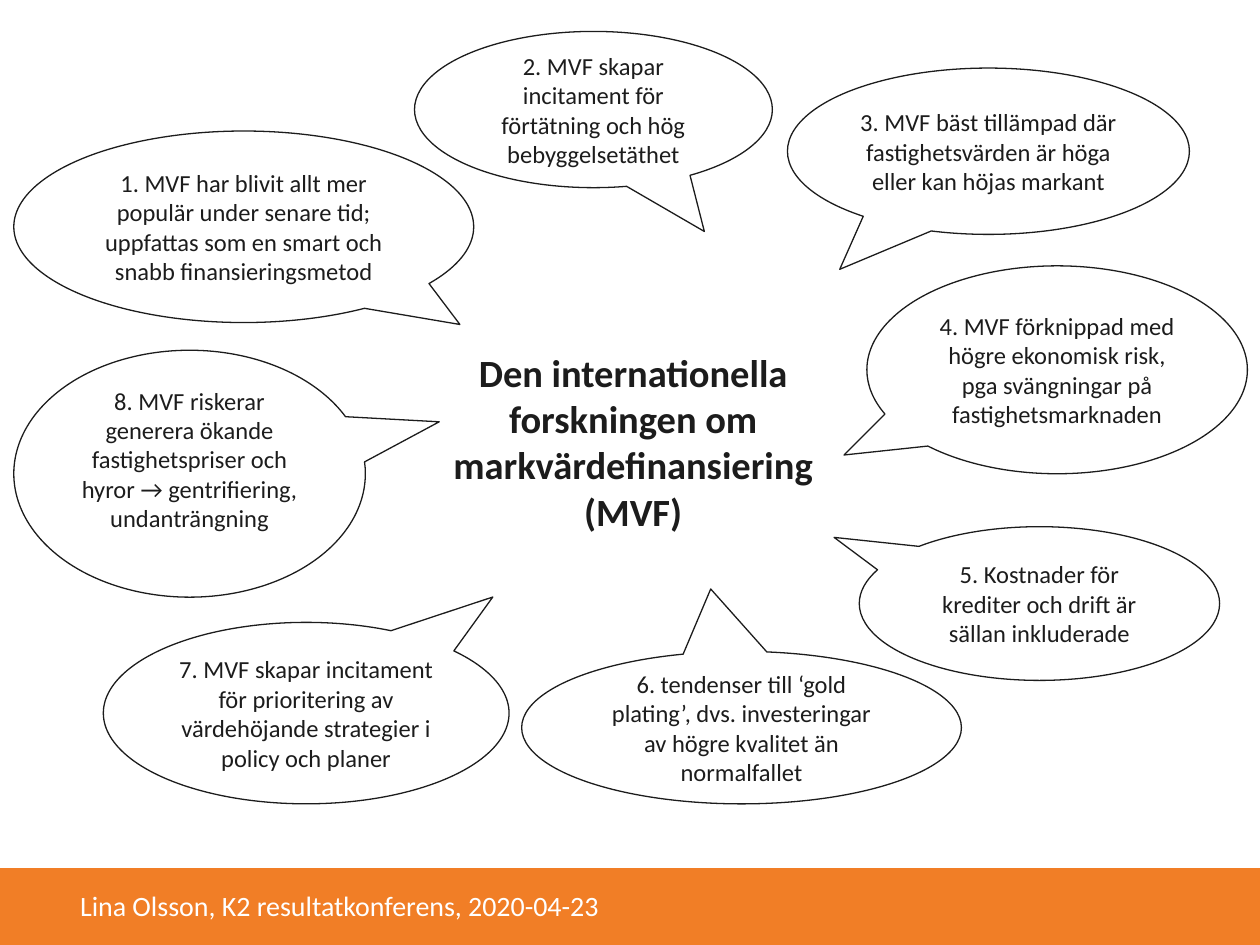
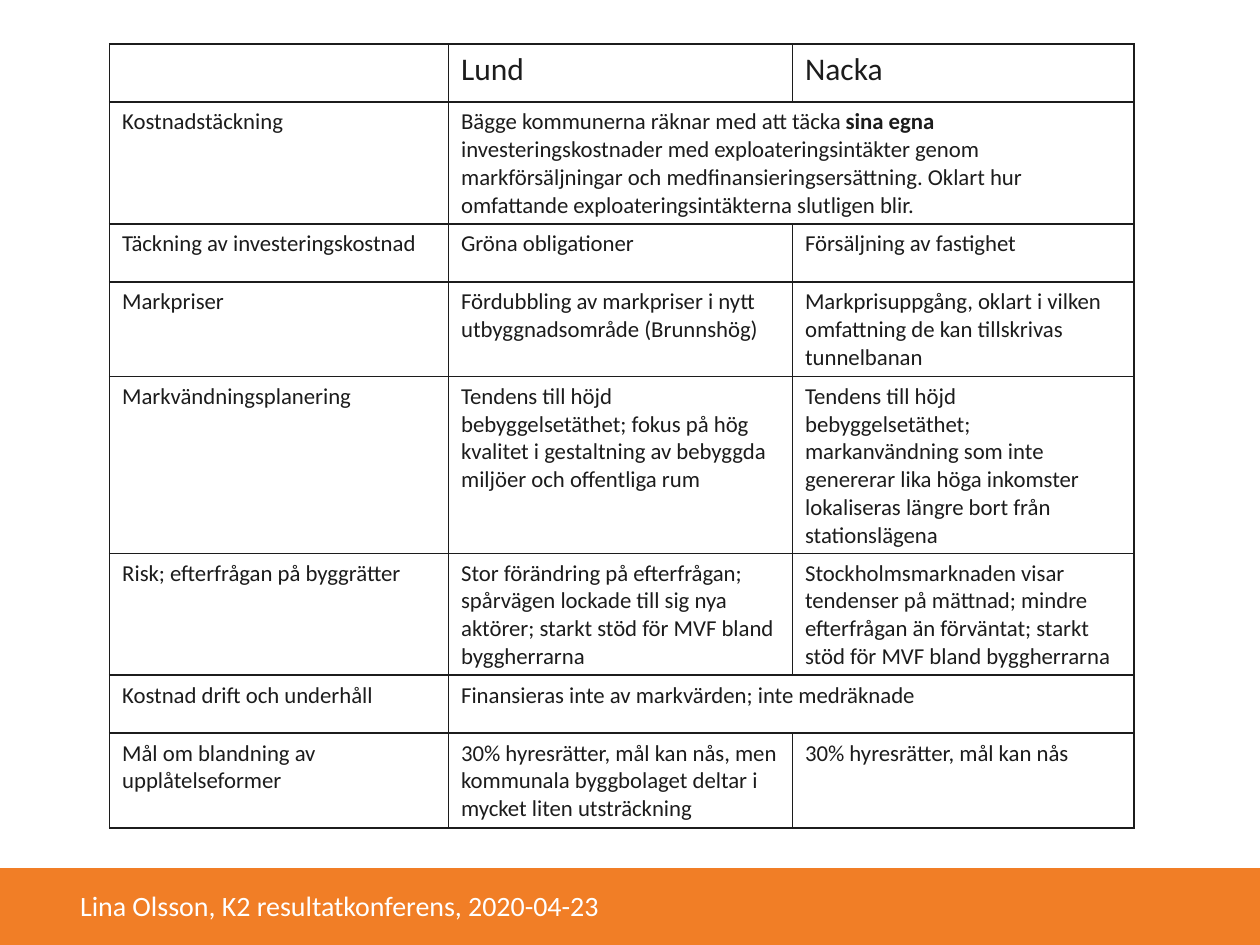
from typing import NamedTuple

from lxml.etree import SubElement
from pptx import Presentation
from pptx.dml.color import RGBColor
from pptx.enum.shapes import MSO_SHAPE
from pptx.enum.text import MSO_ANCHOR, MSO_AUTO_SIZE, PP_ALIGN
from pptx.oxml.ns import qn
from pptx.shapes.autoshape import Shape
from pptx.slide import Slide
from pptx.table import _Cell
from pptx.util import Inches, Length, Pt

INK = RGBColor(0x1C, 0x1C, 0x1C)
WHITE = RGBColor(0xFF, 0xFF, 0xFF)
ORANGE = RGBColor(0xF1, 0x7E, 0x26)
FONT = "Calibri"

WIDTH, HEIGHT = Inches(10), Inches(7.5)
COLUMNS, ROWS = 100, 75
TITLE_ONLY, BLANK = 5, 6

FOOTER = "Lina Olsson, K2 resultatkonferens, 2020-04-23"
TITLE = "Den internationella forskningen om markvärdefinansiering (MVF)"


class Box(NamedTuple):
    """Left, top, width and height in grid columns and rows."""
    left: float
    top: float
    width: float
    height: float


class Bubble(NamedTuple):
    """Speech bubble; the tip is measured from its centre in shares of its size."""
    box: Box
    tip: tuple[float, float]
    text: str
    rows_below: float = 0.5


class Run(NamedTuple):
    text: str
    bold: bool = False


class TableRow(NamedTuple):
    label: str
    lund: str | list[Run]
    nacka: str | None  # None: the Lund cell spans both columns
    size: int = 13


BUBBLES = [
    Bubble(Box(62.5, 5.4, 31.9, 13.2), (-0.37, 0.71),
           "3. MVF bäst tillämpad där fastighetsvärden är höga eller kan höjas markant"),
    Bubble(Box(32.9, 2.5, 28.4, 12.4), (0.31, 0.78),
           "2. MVF skapar incitament för förtätning och hög bebyggelsetäthet"),
    Bubble(Box(68.8, 21.1, 30.2, 16.5), (-0.56, 0.41),
           "4. MVF förknippad med högre ekonomisk risk, pga svängningar på "
           "fastighetsmarknaden"),
    Bubble(Box(68.2, 41.8, 28.6, 12.2), (-0.57, -0.43),
           "5. Kostnader för krediter och drift är sällan inkluderade"),
    Bubble(Box(41.4, 51.7, 34.9, 12.1), (-0.07, -0.91),
           "6. tendenser till ‘gold plating’, dvs. investeringar av högre kvalitet "
           "än normalfallet"),
    Bubble(Box(8.2, 49.4, 32.2, 14.4), (0.46, -0.64),
           "7. MVF skapar incitament för prioritering av värdehöjande strategier i "
           "policy och planer"),
    Bubble(Box(1.1, 27.8, 27.9, 19.6), (0.71, -0.21),
           "8. MVF riskerar generera ökande fastighetspriser och hyror → "
           "gentrifiering, undanträngning", rows_below=2.8),
    Bubble(Box(1.1, 10.4, 36.5, 15.2), (0.47, 0.51),
           "1. MVF har blivit allt mer populär under senare tid; uppfattas som en "
           "smart och snabb finansieringsmetod"),
]

TABLE_BOX = Box(8.7, 3.5, 81.3, 62)
TABLE_COLUMNS = (26.9, 27.3, 27.1)
MIN_ROW = 4.6
TABLE_ROWS = [
    TableRow("", "Lund", "Nacka", size=18),
    TableRow("Kostnadstäckning", [
        Run("Bägge kommunerna räknar med att täcka "),
        Run("sina egna ", bold=True),
        Run("investeringskostnader med exploateringsintäkter genom markförsäljningar "
            "och medfinansieringsersättning. Oklart hur omfattande "
            "exploateringsintäkterna slutligen blir."),
    ], None),
    TableRow("Täckning av investeringskostnad", "Gröna obligationer",
             "Försäljning av fastighet"),
    TableRow("Markpriser",
             "Fördubbling av markpriser i nytt utbyggnadsområde (Brunnshög)",
             "Markprisuppgång, oklart i vilken omfattning de kan tillskrivas "
             "tunnelbanan"),
    TableRow("Markvändningsplanering",
             "Tendens till höjd bebyggelsetäthet; fokus på hög kvalitet i "
             "gestaltning av bebyggda miljöer och offentliga rum",
             "Tendens till höjd bebyggelsetäthet; markanvändning som inte genererar "
             "lika höga inkomster lokaliseras längre bort från stationslägena"),
    TableRow("Risk; efterfrågan på byggrätter",
             "Stor förändring på efterfrågan; spårvägen lockade till sig nya "
             "aktörer; starkt stöd för MVF bland byggherrarna",
             "Stockholmsmarknaden visar tendenser på mättnad; mindre efterfrågan än "
             "förväntat; starkt stöd för MVF bland byggherrarna"),
    TableRow("Kostnad drift och underhåll",
             "Finansieras inte av markvärden; inte medräknade", None),
    TableRow("Mål om blandning av upplåtelseformer",
             "30% hyresrätter, mål kan nås, men kommunala byggbolaget deltar i "
             "mycket liten utsträckning",
             "30% hyresrätter, mål kan nås"),
]


def col(n: float) -> Length:
    return Length(round(WIDTH * n / COLUMNS))


def row(n: float) -> Length:
    return Length(round(HEIGHT * n / ROWS))


def place(box: Box) -> tuple[Length, Length, Length, Length]:
    return col(box.left), row(box.top), col(box.width), row(box.height)


def write(holder: Shape | _Cell, text: str | list[Run], size: int,
          color: RGBColor = INK, align: PP_ALIGN = PP_ALIGN.CENTER) -> None:
    p = holder.text_frame.paragraphs[0]
    p.alignment = align
    for run in [Run(text)] if isinstance(text, str) else text:
        r = p.add_run()
        r.text = run.text
        r.font.name, r.font.size, r.font.bold = FONT, Pt(size), run.bold
        r.font.color.rgb = color


def add_filled(s: Slide, kind: MSO_SHAPE, box: Box, fill: RGBColor) -> Shape:
    sp = s.shapes.add_shape(kind, *place(box))
    sp.shadow.inherit = False
    sp.fill.solid()
    sp.fill.fore_color.rgb = fill
    return sp


def add_footer(s: Slide) -> None:
    band = add_filled(s, MSO_SHAPE.RECTANGLE, Box(0, 68.9, COLUMNS, 6.1), ORANGE)
    band.line.fill.background()
    sp = s.shapes.add_textbox(*place(Box(5.1, 70, 43.7, 3.7)))
    sp.text_frame.word_wrap = False
    sp.text_frame.auto_size = MSO_AUTO_SIZE.SHAPE_TO_FIT_TEXT
    write(sp, FOOTER, 16, WHITE)


def add_title(s: Slide) -> None:
    sp = s.shapes.title
    sp.left, sp.top, sp.width, sp.height = place(Box(31.7, 27.2, 37.1, 19.5))
    tf = sp.text_frame
    tf.auto_size = MSO_AUTO_SIZE.NONE
    tf.vertical_anchor = MSO_ANCHOR.TOP
    write(sp, [Run(TITLE, bold=True)], 22)


def add_bubble(s: Slide, bubble: Bubble) -> None:
    sp = add_filled(s, MSO_SHAPE.OVAL_CALLOUT, bubble.box, WHITE)
    sp.adjustments[0], sp.adjustments[1] = bubble.tip
    sp.line.color.rgb, sp.line.width = INK, Pt(0.75)
    tf = sp.text_frame
    tf.word_wrap = True
    tf.vertical_anchor = MSO_ANCHOR.MIDDLE
    tf.margin_bottom = row(bubble.rows_below)
    write(sp, bubble.text, 14)


def frame_cell(cell: _Cell) -> None:
    """Give the cell thin borders on all sides and no fill."""
    props = cell._tc.get_or_add_tcPr()
    for side in ("a:lnL", "a:lnR", "a:lnT", "a:lnB"):
        line = SubElement(props, qn(side), w=str(Pt(1)))
        SubElement(SubElement(line, qn("a:solidFill")), qn("a:srgbClr"), val=str(INK))
    cell.fill.background()


def add_comparison(s: Slide) -> None:
    frame = s.shapes.add_table(len(TABLE_ROWS), len(TABLE_COLUMNS), *place(TABLE_BOX))
    table = frame.table
    table.first_row = table.horz_banding = False
    for column, width in zip(table.columns, TABLE_COLUMNS):
        column.width = col(width)
    for i, entry in enumerate(TABLE_ROWS):
        table.rows[i].height = row(MIN_ROW)
        for j, text in enumerate((entry.label, entry.lund, entry.nacka)):
            cell = table.cell(i, j)
            frame_cell(cell)
            if text:
                write(cell, text, entry.size, align=PP_ALIGN.LEFT)
        if entry.nacka is None:
            table.cell(i, 1).merge(table.cell(i, 2))
    frame.height = row(TABLE_BOX.height)


def main() -> None:
    prs = Presentation()
    prs.slide_width, prs.slide_height = WIDTH, HEIGHT

    s = prs.slides.add_slide(prs.slide_layouts[TITLE_ONLY])
    add_footer(s)
    add_title(s)
    for bubble in BUBBLES:
        add_bubble(s, bubble)

    s = prs.slides.add_slide(prs.slide_layouts[BLANK])
    add_footer(s)
    add_comparison(s)

    prs.save("out.pptx")


if __name__ == "__main__":
    main()
